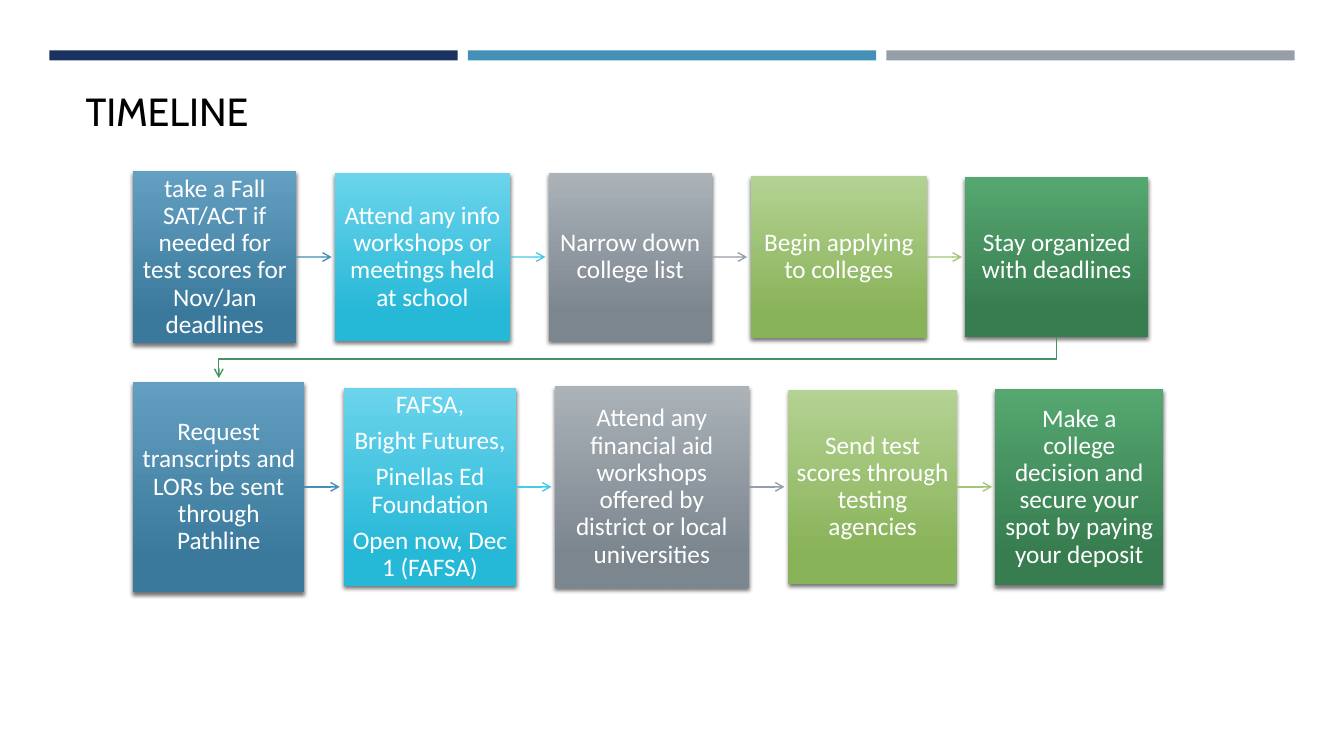
"""Build the college application timeline slide."""
from lxml import etree
from pptx import Presentation, util as u
from pptx.dml.color import RGBColor
from pptx.enum import shapes, text
from pptx.oxml.ns import qn

Inches = u.Inches


def rgb(hex_value):
    return RGBColor.from_string(hex_value)


def style_arrow(arrow, color):
    arrow.line.color.rgb = rgb(color)
    arrow.line.width = u.Pt(1)
    properties = arrow._element.spPr
    etree.SubElement(properties.find(qn("a:ln")), qn("a:tailEnd"), type="arrow")
    etree.SubElement(properties, qn("a:effectLst"))


deck = Presentation()
deck.slide_width, deck.slide_height = Inches(13.33), Inches(7.5)
slide = deck.slides.add_slide(deck.slide_layouts[6])

for index, color in enumerate(["1A3260", "4590B8", "969FA7"]):
    band = slide.shapes.add_shape(shapes.MSO_SHAPE.RECTANGLE, Inches(0.49 + 4.15 * index),
                                  Inches(0.5), Inches(4.05), Inches(0.1))
    band.shadow.inherit = False
    band.fill.solid()
    band.fill.fore_color.rgb = rgb(color)
    band.line.fill.background()

title = slide.shapes.add_textbox(Inches(0.75), Inches(0.12), Inches(11.37), Inches(1.26))
title.text_frame.word_wrap = True
title.text_frame.vertical_anchor = text.MSO_ANCHOR.BOTTOM
heading = title.text_frame.paragraphs[0]
heading.text = "TIMELINE"
for name, value in {"name": "Cabin", "size": u.Pt(28)}.items():
    setattr(heading.font, name, value)
heading.font.color.rgb = rgb("000000")

palette = [
    ("639FC1", "3A799B", "4590B8"),
    ("6BD4EC", "26B8D7", "45CBE8"),
    ("ABB2B8", "7C868F", "969FA7"),
    ("B4D293", "89B359", "A2C777"),
    ("55A770", "377D50", "42955F"),
]
rows = [
    (2.55, [
        (1.32, 1.62, 1.71, "take a Fall SAT/ACT if needed for test scores for Nov/Jan deadlines"),
        (3.32, 1.74, 1.66, "Attend any info workshops or meetings held at school"),
        (5.44, 1.62, 1.66, "Narrow down college list"),
        (7.45, 1.74, 1.6, "Begin applying to colleges"),
        (9.57, 1.82, 1.58, "Stay organized with deadlines"),
    ]),
    (4.83, [
        (1.32, 1.7, 2.09, "Request transcripts and LORs be sent through Pathline"),
        (3.41, 1.71, 1.96, "FAFSA,\nBright Futures,\nPinellas Ed Foundation\nOpen now, Dec 1 (FAFSA)"),
        (5.5, 1.93, 2, "Attend any financial aid workshops offered by district or local universities"),
        (7.82, 1.67, 1.92, "Send test scores through testing agencies"),
        (9.87, 1.67, 1.95, "Make a college decision and secure your spot by paying your deposit"),
    ]),
]
frame_format = {
    "word_wrap": True, "vertical_anchor": text.MSO_ANCHOR.MIDDLE,
    "margin_left": Inches(0.08), "margin_right": Inches(0.08),
    "margin_top": Inches(0.09), "margin_bottom": Inches(0.09),
}
paragraph_format = {"alignment": text.PP_ALIGN.CENTER, "line_spacing": 0.9, "space_after": u.Pt(6.3)}

for middle, steps in rows:
    for (left, width, height, wording), (light, dark, accent) in zip(steps, palette):
        step = slide.shapes.add_shape(shapes.MSO_SHAPE.RECTANGLE, Inches(left),
                                      Inches(middle - height / 2), Inches(width), Inches(height))
        step.line.fill.background()
        step.fill.gradient()
        step.fill.gradient_angle = 270
        for stop, color, position in zip(step.fill.gradient_stops, (light, dark), (0, 0.84)):
            stop.color.rgb = rgb(color)
            stop.position = position

        step.shadow.inherit = False
        effects = step._element.spPr.find(qn("a:effectLst"))
        shadow = etree.SubElement(effects, qn("a:outerShdw"), blurRad=str(u.Pt(3)),
                                  dist=str(u.Pt(2)), dir="5400000", rotWithShape="0")
        shade = etree.SubElement(shadow, qn("a:srgbClr"), val="000000")
        etree.SubElement(shade, qn("a:alpha"), val="55000")

        frame = step.text_frame
        for name, value in frame_format.items():
            setattr(frame, name, value)
        frame.text = wording
        for paragraph in frame.paragraphs:
            for name, value in paragraph_format.items():
                setattr(paragraph, name, value)
            for name, value in {"name": "Calibri", "size": u.Pt(18)}.items():
                setattr(paragraph.font, name, value)
            paragraph.font.color.rgb = rgb("FFFFFF")

        if left != steps[-1][0]:
            right = left + width
            arrow = slide.shapes.add_connector(shapes.MSO_CONNECTOR.STRAIGHT, Inches(right),
                                               Inches(middle), Inches(right + 0.35), Inches(middle))
            arrow.begin_connect(step, 3)
            style_arrow(arrow, accent)

turns = [(Inches(x), Inches(y)) for x, y in [(10.48, 3.34), (10.48, 3.56), (2.17, 3.56), (2.17, 3.75)]]
outline = slide.shapes.build_freeform(*turns[0])
outline.add_line_segments(turns[1:], close=False)
row_link = outline.convert_to_shape()
row_link.fill.background()
style_arrow(row_link, palette[-1][2])

deck.save("out.pptx")
